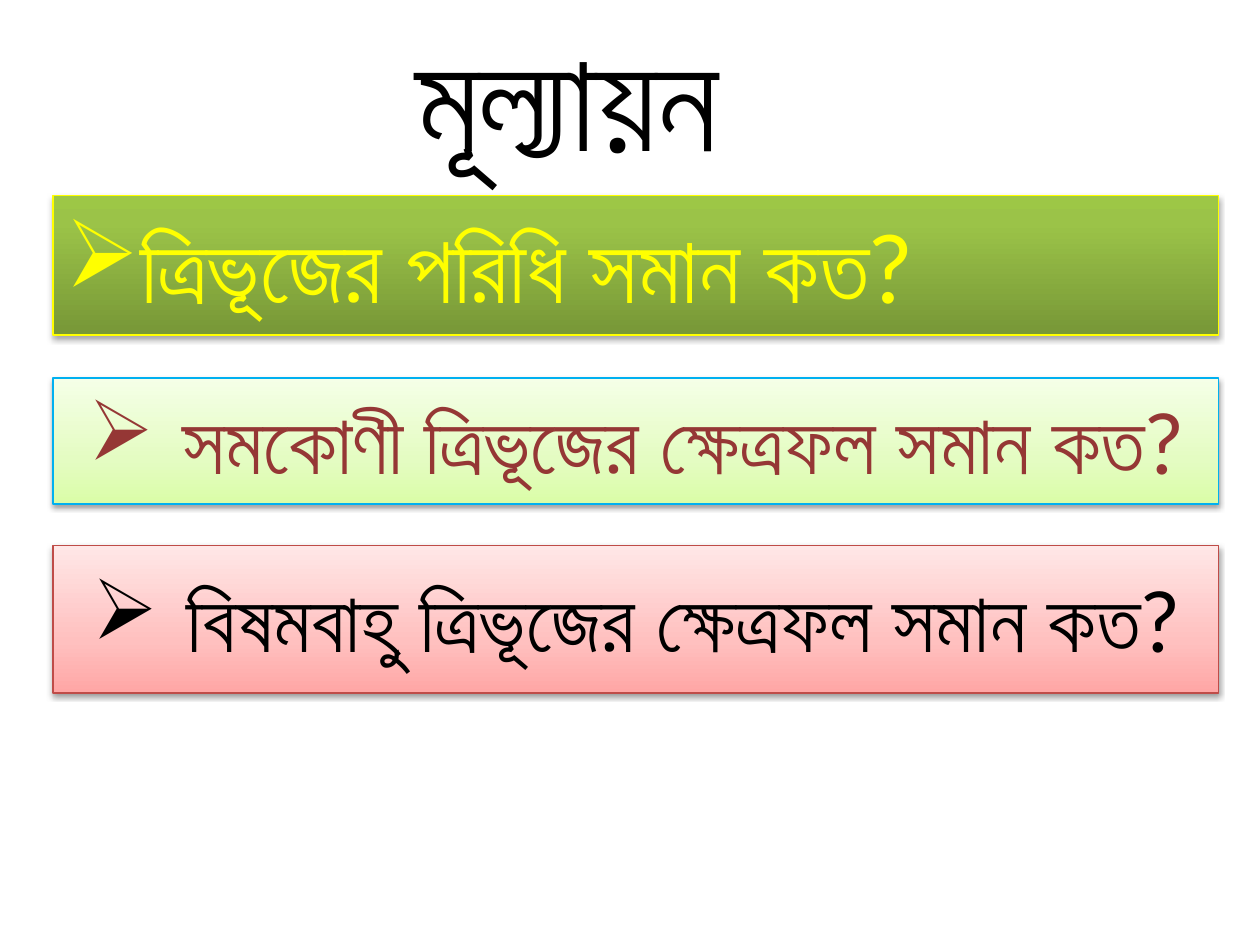
from lxml import etree
from pptx import Presentation
from pptx.dml.color import RGBColor
from pptx.enum import shapes, text
from pptx.oxml import ns
from pptx.util import Inches, Pt

FONT = "Lato"
LEFT, WIDTH = 0.42, 9.25

QUESTIONS = [
    dict(words="ত্রিভূজের পরিধি সমান কত?", top=1.55, height=1.11,
         stops=[(0, "779737"), (80, "9BC348"), (100, "9DC746")],
         border="FFFF00", color="FFFF00", size=54, indent=0.31,
         align=text.PP_ALIGN.LEFT, shadow=(35, 1.8)),
    dict(words="সমকোণী ত্রিভূজের ক্ষেত্রফল সমান কত?", top=3, height=1,
         stops=[(0, "DAFDA7"), (35, "E4FCC2"), (100, "F5FFE7")],
         border="00B0F0", color="953735", size=48, indent=0.75,
         align=text.PP_ALIGN.CENTER, shadow=(38, 1.6)),
    dict(words="বিষমবাহু ত্রিভূজের ক্ষেত্রফল সমান কত?", top=4.33, height=1.17,
         stops=[(0, "FFA6A5"), (35, "FFC0BF"), (100, "FFE7E7")],
         border="BF4C48", color="000000", size=48, indent=0.75,
         align=text.PP_ALIGN.CENTER, shadow=(38, 1.6)),
]


def rgb(value):
    return RGBColor.from_string(value)


def add_node(parent, tag, **attributes):
    node = etree.SubElement(parent, ns.qn(tag))
    for name, value in attributes.items():
        node.set(name, str(value))
    return node


def set_font(para, size, color):
    para.font.name = FONT
    para.font.size = Pt(size)
    para.font.color.rgb = rgb(color)


def set_gradient(shape, stops):
    """Fill the shape with stops that run from bottom to top."""
    shape.fill.gradient()
    shape.fill.gradient_angle = 90
    stop_list = shape._element.spPr.find(".//" + ns.qn("a:gsLst"))
    for old in list(stop_list):
        stop_list.remove(old)
    for position, color in stops:
        stop = add_node(stop_list, "a:gs", pos=position * 1000)
        add_node(stop, "a:srgbClr", val=color)


def set_shadow(shape, opacity, distance):
    shape.shadow.inherit = False
    effects = shape._element.spPr.find(ns.qn("a:effectLst"))
    outer = add_node(effects, "a:outerShdw", blurRad=Pt(3.1),
                     dist=Pt(distance), dir=90 * 60000, rotWithShape=0)
    color = add_node(outer, "a:srgbClr", val="000000")
    add_node(color, "a:alpha", val=opacity * 1000)


def set_bullet(para, indent):
    properties = para._p.get_or_add_pPr()
    properties.set("marL", str(Inches(indent)))
    properties.set("indent", str(-Inches(indent)))
    add_node(properties, "a:buChar", char="➢")


def fill_title(page, left, top, width, height):
    title = page.shapes.title
    title.left, title.top = Inches(left), Inches(top)
    title.width, title.height = Inches(width), Inches(height)
    frame = title.text_frame
    frame.text = "মূল্যায়ন"
    frame.vertical_anchor = text.MSO_ANCHOR.TOP
    frame.auto_size = text.MSO_AUTO_SIZE.NONE
    para = frame.paragraphs[0]
    para.alignment = text.PP_ALIGN.CENTER
    set_font(para, 80, "000000")


def add_question(page, words, top, height, stops, border, color, size,
                 indent, align, shadow):
    box = page.shapes.add_shape(
        shapes.MSO_SHAPE.RECTANGLE, Inches(LEFT), Inches(top),
        Inches(WIDTH), Inches(height))
    set_gradient(box, stops)
    box.line.color.rgb = rgb(border)
    box.line.width = Pt(0.75)
    set_shadow(box, *shadow)
    frame = box.text_frame
    frame.word_wrap = True
    frame.vertical_anchor = text.MSO_ANCHOR.MIDDLE
    para = frame.paragraphs[0]
    para.text = words
    para.alignment = align
    set_bullet(para, indent)
    set_font(para, size, color)


def main():
    deck = Presentation()
    deck.slide_width, deck.slide_height = Inches(10), Inches(7.5)
    page = deck.slides.add_slide(deck.slide_layouts.get_by_name("Title Only"))
    fill_title(page, 3, 0.04, 3, 1.45)
    for question in QUESTIONS:
        add_question(page, **question)
    deck.save("out.pptx")


if __name__ == "__main__":
    main()
